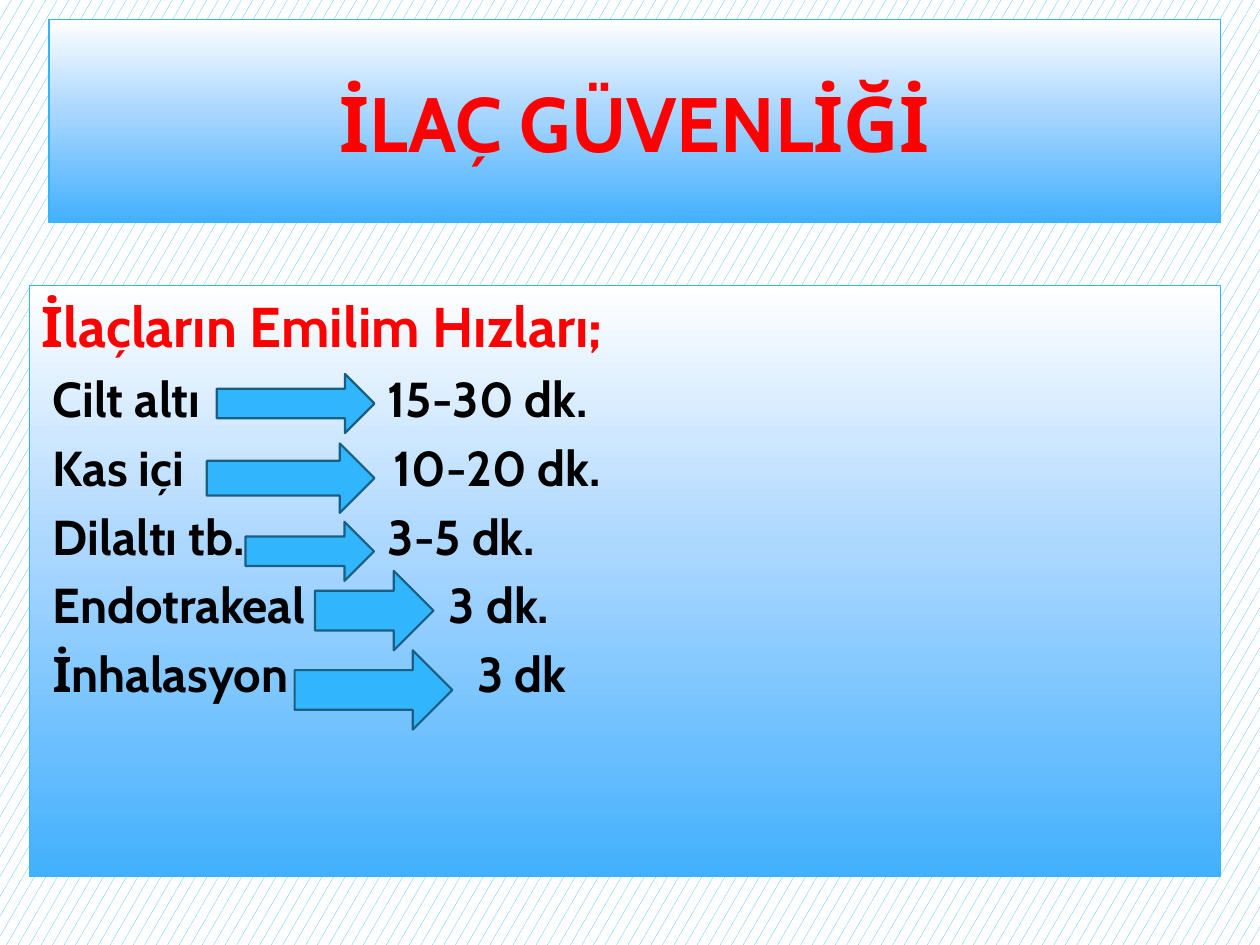
from copy import deepcopy

from lxml import etree
from pptx import Presentation
from pptx.dml.color import RGBColor as RGB
from pptx.enum.dml import MSO_PATTERN as PATTERN
from pptx.enum.shapes import MSO_SHAPE as SHAPE
from pptx.enum.text import MSO_ANCHOR as ANCHOR, PP_ALIGN as ALIGN
from pptx.oxml.ns import qn
from pptx.util import Cm, Pt

COLORS = {
    "white": "FFFFFF", "pale": "ACD7FF", "sky": "42B0FD",
    "blue": "31B6FD", "navy": "195F84", "red": "FF0000", "black": "000000",
}
GRADIENT = [(0, "white"), (0.44, "pale"), (1, "sky")]
HEADING = {"size": Pt(32), "color": "red"}
ROW = {"size": Pt(28), "color": "black"}

# Route, absorption time, tab stop of the time, arrow (left, top, width, height), all in cm
RATES = [
    ("Cilt altı", "15-30 dk.", 6.98, (4.37, 7.54, 3.18, 1.19)),
    ("Kas içi", "10-20 dk.", 7.1, (4.17, 8.94, 3.38, 1.4)),
    ("Dilaltı tb.", "3-5 dk.", 6.98, (4.95, 10.52, 2.59, 1.19)),
    ("Endotrakeal", "3 dk.", 8.21, (6.35, 11.51, 2.39, 1.6)),
    ("İnhalasyon", "3 dk", 8.78, (5.94, 13.11, 3.18, 1.6)),
]


def color(name):
    return RGB.from_string(COLORS[name])


class SlideBuilder:
    def __init__(self, slide, font):
        self.slide = slide
        self.font = font

    def background(self):
        fill = self.slide.background.fill
        fill.patterned()
        fill.pattern = PATTERN.SMALL_CONFETTI
        fill.fore_color.rgb = color("blue")
        fill.back_color.rgb = color("white")

    def shape(self, kind, box, line, width):
        sp = self.slide.shapes.add_shape(kind, *map(Cm, box))
        sp.shadow.inherit = False
        sp.line.color.rgb = color(line)
        sp.line.width = Pt(width)
        return sp

    def panel(self, box, anchor):
        """Add a gradient rectangle and return its text frame."""
        sp = self.shape(SHAPE.RECTANGLE, box, "blue", 0.75)
        sp.fill.gradient()
        sp.fill.gradient_angle = 270
        first = sp.fill.gradient_stops[0]._gs
        first.addnext(deepcopy(first))
        for stop, (position, name) in zip(sp.fill.gradient_stops, GRADIENT):
            stop.position = position
            stop.color.rgb = color(name)
        tf = sp.text_frame
        tf.word_wrap = True
        tf.vertical_anchor = anchor
        return tf

    def paragraph(self, p, text, style, align=ALIGN.LEFT, before=0, tab=None):
        p.alignment = align
        p.space_before = Pt(before)
        if tab:
            tabs = etree.SubElement(p._p.get_or_add_pPr(), qn("a:tabLst"))
            etree.SubElement(tabs, qn("a:tab"), pos=str(Cm(tab)), algn="l")
        r = p.add_run()
        r.text = text
        for name, value in {"name": self.font, "bold": True, "size": style["size"]}.items():
            setattr(r.font, name, value)
        r.font.color.rgb = color(style["color"])

    def arrow(self, box):
        sp = self.shape(SHAPE.RIGHT_ARROW, box, "navy", 1.25)
        sp.fill.solid()
        sp.fill.fore_color.rgb = color("blue")


def main():
    prs = Presentation()
    prs.slide_width, prs.slide_height = Cm(25.4), Cm(19.05)
    s = SlideBuilder(prs.slides.add_slide(prs.slide_layouts[6]), "Cabin")
    s.background()

    title = s.panel((0.99, 0.4, 23.62, 4.09), ANCHOR.MIDDLE)
    s.paragraph(title.paragraphs[0], "İLAÇ GÜVENLİĞİ",
                {"size": Pt(44), "color": "red"}, ALIGN.CENTER)

    body = s.panel((0.59, 5.76, 24.02, 11.91), ANCHOR.TOP)
    s.paragraph(body.paragraphs[0], "İlaçların Emilim Hızları;", HEADING)
    for route, time, tab, box in RATES:
        s.paragraph(body.add_paragraph(), f" {route}\t{time}", ROW, before=5.6, tab=tab)
        s.arrow(box)

    prs.save("out.pptx")


if __name__ == "__main__":
    main()
